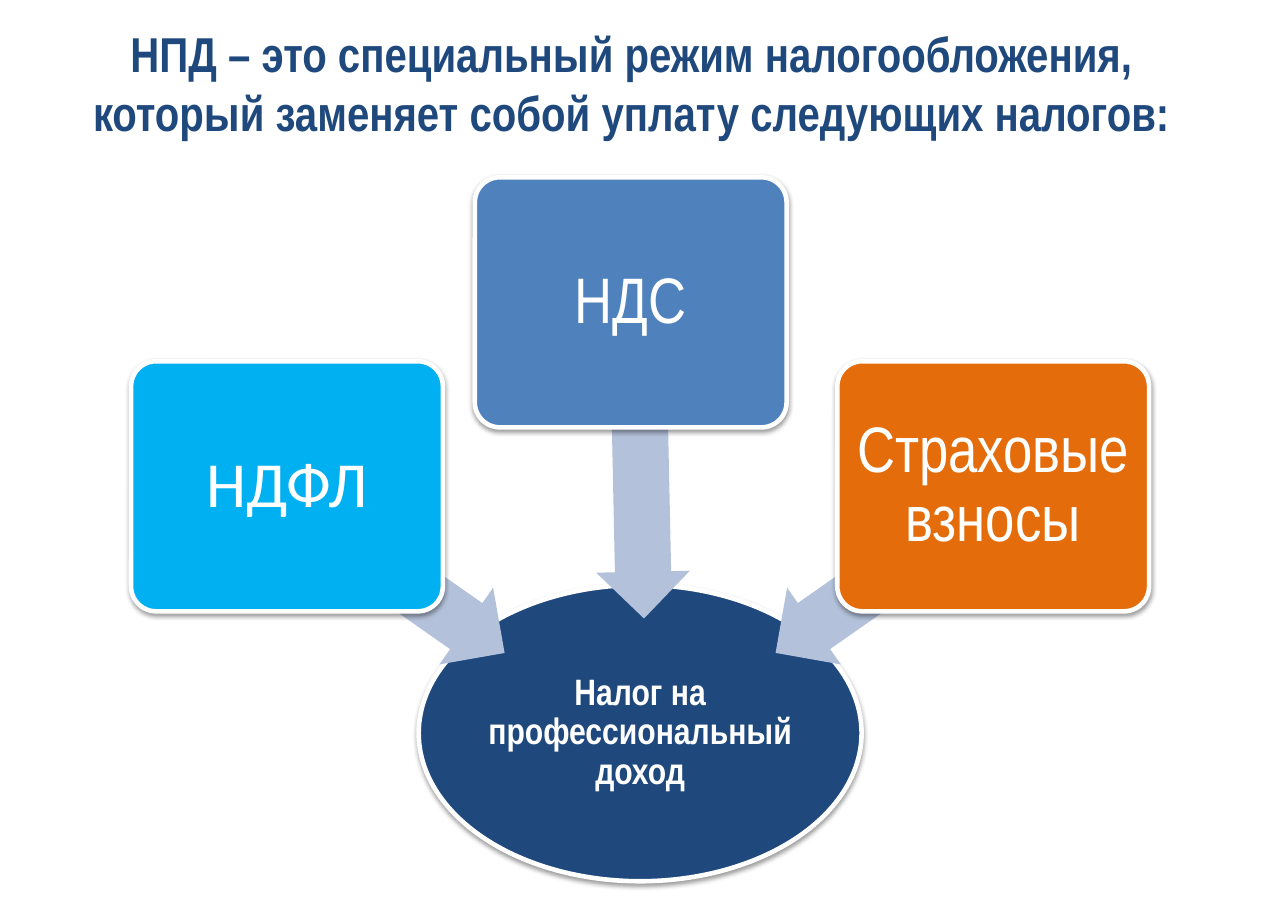
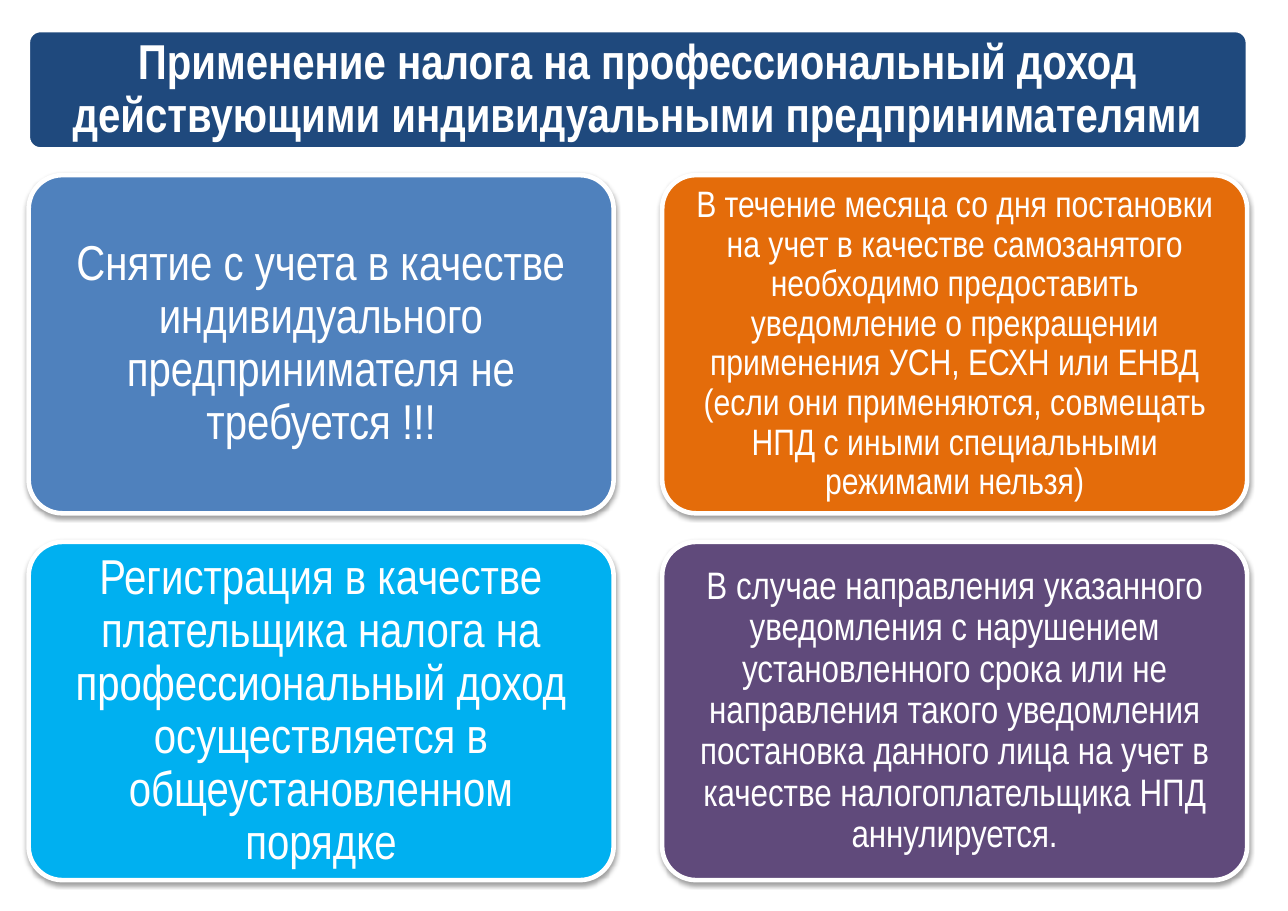
"""Builds two slides about the tax on professional income."""
from dataclasses import dataclass

from lxml import etree
from pptx import Presentation
from pptx.dml.color import RGBColor
from pptx.enum.shapes import MSO_SHAPE
from pptx.enum.text import MSO_ANCHOR, PP_ALIGN
from pptx.oxml.ns import qn
from pptx.shapes.autoshape import Shape
from pptx.slide import Slide
from pptx.util import Inches, Pt

ELLIPSE = MSO_SHAPE.OVAL
ROUNDED = MSO_SHAPE.ROUNDED_RECTANGLE
LEFT_ARROW = MSO_SHAPE.LEFT_ARROW
MIDDLE = MSO_ANCHOR.MIDDLE
CENTER = PP_ALIGN.CENTER

COLORS = {
    "navy": "1F497D",
    "blue": "4F81BD",
    "sky": "00B0F0",
    "orange": "E46C0A",
    "purple": "604A7B",
    "arrow": "B3C1DB",
    "white": "FFFFFF",
    "shadow": "000000",
}
FONT = "Arial Narrow"
TITLE_SIZE = 32
CORNER = 0.1


@dataclass(frozen=True)
class Box:
    """A place on the slide, in inches."""

    left: float
    top: float
    width: float
    height: float


@dataclass(frozen=True)
class Words:
    """A centred text with its format."""

    text: str
    size: float
    font: str = FONT
    bold: bool = False
    color: str = "white"
    inset_x: float = 0.13
    inset_y: float = 0.13
    spacing: float = 0.9


@dataclass(frozen=True)
class Panel:
    """A filled, outlined shape that carries text."""

    box: Box
    fill: str
    words: Words
    kind: MSO_SHAPE = ROUNDED
    outline: float = 3
    shadow: bool = True


@dataclass(frozen=True)
class Arrow:
    """A turned block arrow."""

    box: Box
    rotation: float


def rgb(name: str) -> RGBColor:
    """Look up a named colour."""
    return RGBColor.from_string(COLORS[name])


def lengths(box: Box) -> tuple:
    """Turn a box into slide lengths."""
    return tuple(Inches(value) for value in (box.left, box.top, box.width, box.height))


def apply_format(target: object, values: dict) -> None:
    """Set each named attribute on the target."""
    for name, value in values.items():
        setattr(target, name, value)


def write_words(shape: Shape, words: Words) -> None:
    """Write centred text into a shape."""
    frame = shape.text_frame
    apply_format(frame, {
        "word_wrap": True,
        "vertical_anchor": MIDDLE,
        "margin_left": Inches(words.inset_x),
        "margin_right": Inches(words.inset_x),
        "margin_top": Inches(words.inset_y),
        "margin_bottom": Inches(words.inset_y),
    })
    paragraph = frame.paragraphs[0]
    apply_format(paragraph, {"alignment": CENTER, "line_spacing": words.spacing})
    run = paragraph.add_run()
    run.text = words.text
    apply_format(run.font, {"name": words.font, "size": Pt(words.size), "bold": words.bold})
    run.font.color.rgb = rgb(words.color)


def add_shadow(shape: Shape) -> None:
    """Give a shape a soft shadow below it."""
    effects = shape._element.spPr.find(qn("a:effectLst"))
    outer = etree.SubElement(effects, qn("a:outerShdw"), {
        "blurRad": str(Pt(3.1)), "dist": str(Pt(1.6)), "dir": "5400000", "rotWithShape": "0",
    })
    color = etree.SubElement(outer, qn("a:srgbClr"), val=COLORS["shadow"])
    etree.SubElement(color, qn("a:alpha"), val="38000")


def add_filled(slide: Slide, kind: MSO_SHAPE, box: Box, fill: str) -> Shape:
    """Add a flat preset shape."""
    shape = slide.shapes.add_shape(kind, *lengths(box))
    shape.shadow.inherit = False
    shape.fill.solid()
    shape.fill.fore_color.rgb = rgb(fill)
    return shape


def add_panel(slide: Slide, panel: Panel) -> None:
    """Draw a panel with its text."""
    shape = add_filled(slide, panel.kind, panel.box, panel.fill)
    if panel.kind == ROUNDED:
        shape.adjustments[0] = CORNER
    shape.line.color.rgb = rgb("white")
    shape.line.width = Pt(panel.outline)
    if panel.shadow:
        add_shadow(shape)
    write_words(shape, panel.words)


def add_arrow(slide: Slide, arrow: Arrow) -> None:
    """Draw a block arrow."""
    shape = add_filled(slide, LEFT_ARROW, arrow.box, "arrow")
    shape.line.fill.background()
    shape.rotation = arrow.rotation
    shape.adjustments[0] = 0.6
    shape.adjustments[1] = 0.5


def build_replaced_taxes(slide: Slide) -> None:
    """Show the three taxes that the single tax replaces."""
    add_panel(slide, Panel(
        Box(3.8, 5.31, 4.02, 2.69), "navy",
        Words("Налог на профессиональный доход", 24, bold=True, inset_x=0.02, inset_y=0.02),
        ELLIPSE,
    ))
    taxes = (
        ("НДФЛ", "Calibri", "sky", 1.19, 3.28, Arrow(Box(2.67, 4.9, 2.1, 0.85), 215)),
        ("НДС", FONT, "blue", 4.31, 1.61, Arrow(Box(4.61, 3.98, 2.42, 0.85), 268.8)),
        ("Страховые взносы", FONT, "orange", 7.6, 3.28, Arrow(Box(6.85, 4.9, 2.1, 0.85), 325)),
    )
    for text, font, fill, left, top, arrow in taxes:
        add_arrow(slide, arrow)
        words = Words(text, 42, font, inset_x=0.09, inset_y=0.09)
        add_panel(slide, Panel(Box(left, top, 2.83, 2.27), fill, words))
    title = slide.shapes.add_textbox(*lengths(Box(0.26, 0.2, 10.95, 1.1)))
    write_words(title, Words(
        "НПД – это специальный режим налогообложения, "
        "который заменяет собой уплату следующих налогов:",
        TITLE_SIZE, bold=True, color="navy", inset_x=0.11, inset_y=0.06, spacing=1.0,
    ))


def build_entrepreneur_rules(slide: Slide) -> None:
    """Show the rules for entrepreneurs as a grid of two by two."""
    left, top, width, height = 0.26, 1.59, 5.31, 3.07
    column_step, row_step = 5.75, 3.33
    add_panel(slide, Panel(
        Box(left, 0.28, column_step + width, 1.07), "navy",
        Words(
            "Применение налога на профессиональный доход "
            "действующими индивидуальными предпринимателями",
            TITLE_SIZE, bold=True,
        ),
        outline=2, shadow=False,
    ))
    rules = (
        ("blue", Words(
            "Снятие с учета в качестве индивидуального предпринимателя не требуется !!!", 32)),
        ("sky", Words(
            "Регистрация в качестве плательщика налога на профессиональный доход "
            "осуществляется в общеустановленном порядке", 32)),
        ("orange", Words(
            "В течение месяца со дня постановки на учет в качестве самозанятого "
            "необходимо предоставить уведомление о прекращении применения УСН, ЕСХН "
            "или ЕНВД (если они применяются, совмещать НПД с иными специальными "
            "режимами нельзя)", 24, inset_x=0.08, inset_y=0.08)),
        ("purple", Words(
            "В случае направления указанного уведомления с нарушением установленного "
            "срока или не направления такого уведомления постановка данного лица на "
            "учет в качестве налогоплательщика НПД аннулируется.",
            25, inset_x=0.1, inset_y=0.1)),
    )
    for index, (fill, words) in enumerate(rules):
        column, row = divmod(index, 2)
        box = Box(left + column * column_step, top + row * row_step, width, height)
        add_panel(slide, Panel(box, fill, words))


def main() -> None:
    """Build and save the presentation."""
    presentation = Presentation()
    apply_format(presentation, {"slide_width": Inches(11.69), "slide_height": Inches(8.27)})
    blank = presentation.slide_layouts[6]
    for build in (build_replaced_taxes, build_entrepreneur_rules):
        build(presentation.slides.add_slide(blank))
    presentation.save("out.pptx")


if __name__ == "__main__":
    main()
